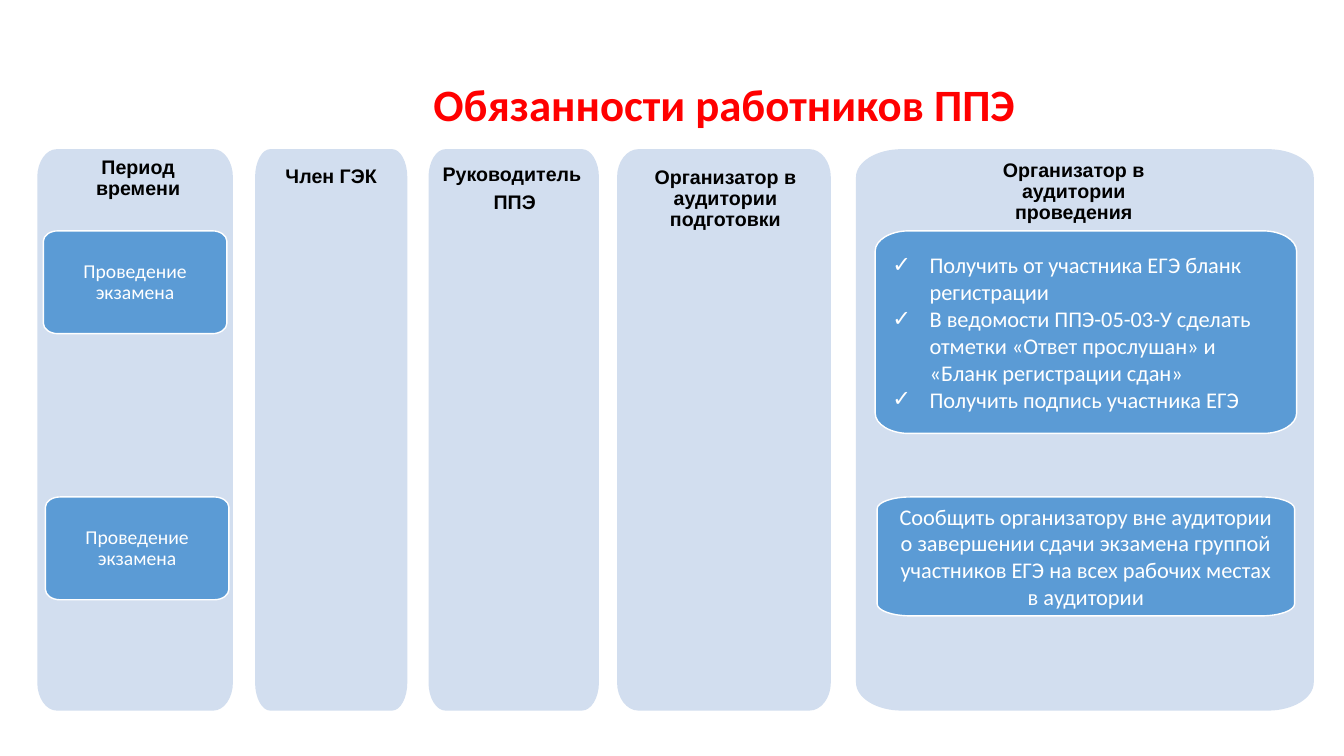
"""Build the slide on the duties of exam staff."""
from lxml import etree
from pptx import Presentation
from pptx import util as u
from pptx.dml import color
from pptx.enum import text
from pptx.oxml import ns

rgb = color.RGBColor.from_string
deck = Presentation()
deck.slide_width, deck.slide_height = u.Inches(13.33), u.Inches(7.5)
page = deck.slides.add_slide(deck.slide_layouts[6])


def plate(left, top, wide, high, rx, ry, hue):
    """Draw a panel whose corners are quarter ellipses."""
    left, top, wide, high = map(u.Inches, (left, top, wide, high))
    rx, ry = int(rx * wide), int(ry * high)
    dots = [(0, ry), (rx, 0), (wide - rx, 0), (wide, ry),
            (wide, high - ry), (wide - rx, high), (rx, high), (0, high - ry)]
    pen = page.shapes.build_freeform(*dots[0])
    pen.add_line_segments(dots[1:], close=True)
    form = pen.convert_to_shape(left, top)
    bends = list(form._element.iter(ns.qn("a:lnTo")))[::2]
    hubs = [(0, 0), (wide, 0), (wide, high), (0, high)]
    for bend, hub, start, end in zip(bends, hubs, dots[::2], dots[1::2]):
        bend.tag = ns.qn("a:cubicBezTo")
        for slot, dot in enumerate((start, end)):
            x, y = (round(d + 0.55 * (h - d)) for d, h in zip(dot, hub))
            knob = etree.Element(ns.qn("a:pt"), x=str(x), y=str(y))
            bend.insert(slot, knob)
    form.shadow.inherit = False
    form.fill.solid()
    form.fill.fore_color.rgb = rgb(hue)
    form.line.fill.background()
    return form


def write(form, lines, size, face, hue, bold=False, tight=False, pad=(0.12, 0.06), ticks=False):
    """Fill a shape with styled paragraphs."""
    frame = form.text_frame
    frame.word_wrap = True
    frame.margin_left = frame.margin_right = u.Inches(pad[0])
    frame.margin_top = frame.margin_bottom = u.Inches(pad[1])
    frame.text = "\n".join(lines)
    for para in frame.paragraphs:
        para.alignment = text.PP_ALIGN.LEFT if ticks else text.PP_ALIGN.CENTER
        if tight:
            para.line_spacing = 0.9
            para.space_after = u.Pt(5)
        if ticks:
            prop = para._p.get_or_add_pPr()
            prop.set("marL", str(u.Inches(0.37)))
            prop.set("indent", str(-u.Inches(0.37)))
            etree.SubElement(prop, ns.qn("a:buFont")).set("typeface", "Arial")
            etree.SubElement(prop, ns.qn("a:buChar")).set("char", "✓")
        for run in para.runs:
            run.font.size = u.Pt(size)
            run.font.name = face
            run.font.bold = bold
            run.font.color.rgb = rgb(hue)
    return frame


title = page.shapes.add_textbox(*map(u.Inches, (1.56, 0.7, 11.25, 0.66)))
write(title, ["Обязанности работников ППЭ"], 32, "Calibri", "FF0000", bold=True)

for left, wide in [(0.37, 1.94), (2.53, 1.51), (4.25, 1.69), (6.12, 2.12), (8.49, 4.54)]:
    plate(left, 1.48, wide, 5.57, 0.1, 0.05, "D2DEEF")

duties = [
    "Получить от участника ЕГЭ бланк регистрации",
    "В ведомости ППЭ-05-03-У сделать отметки «Ответ прослушан» и «Бланк регистрации сдан»",
    "Получить подпись участника ЕГЭ",
]
report = ["Сообщить организатору вне аудитории о завершении сдачи экзамена группой "
          "участников ЕГЭ на всех рабочих местах в аудитории"]
stage = ["Проведение экзамена"]
cards = [
    ((8.68, 2.29, 4.18, 2.01), duties, 16),
    ((8.7, 4.93, 4.14, 1.18), report, 16),
    ((0.43, 2.29, 1.82, 1.02), stage, 14),
    ((0.45, 4.93, 1.82, 1.02), stage, 14),
]
for place, lines, size in cards:
    card = plate(*place, 0.08, 0.1, "5B9BD5")
    card.line.color.rgb = rgb("FFFFFF")
    card.line.width = u.Pt(1)
    frame = write(card, lines, size, "Calibri", "FFFFFF", tight=lines is stage,
                  pad=(0.17, 0.14), ticks=lines is duties)
    frame.vertical_anchor = text.MSO_ANCHOR.MIDDLE

heads = [
    ((9.57, 1.53, 2.16, 0.76), ["Организатор в аудитории проведения"]),
    ((6.08, 1.6, 2.23, 0.76), ["Организатор в аудитории подготовки"]),
    ((4.06, 1.57, 2.09, 0.63), ["Руководитель ", "ППЭ"]),
    ((2.71, 1.59, 1.15, 0.33), ["Член ГЭК"]),
    ((0.53, 1.5, 1.68, 0.54), ["Период времени"]),
]
for place, lines in heads:
    head = page.shapes.add_textbox(*map(u.Inches, place))
    frame = write(head, lines, 14, "Arial", "000000", bold=True, tight=True)
    frame.word_wrap = lines != ["Член ГЭК"]

deck.save("out.pptx")
